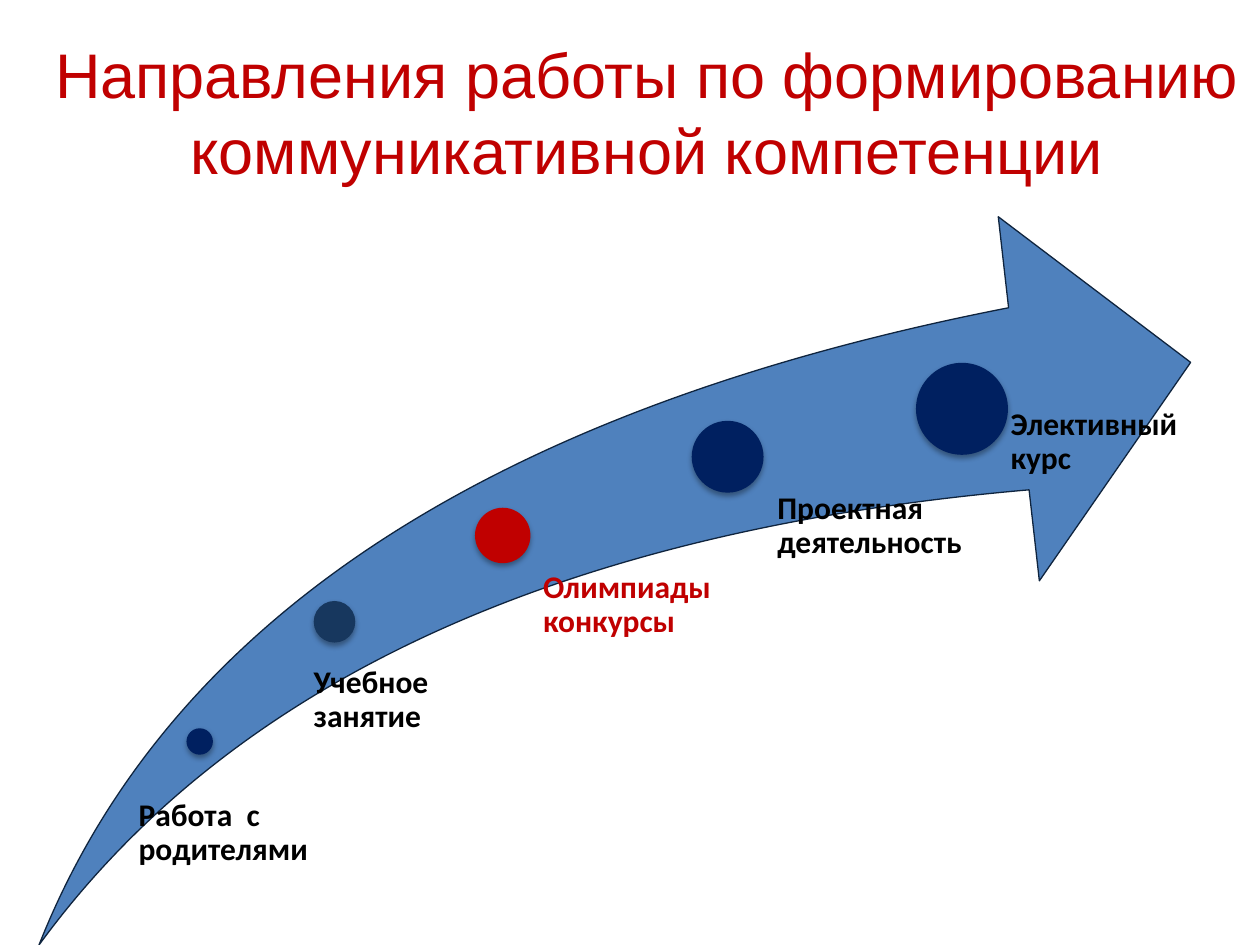
import dataclasses

import lxml.etree
import pptx
import pptx.dml.color
import pptx.enum.shapes
import pptx.enum.text
import pptx.oxml.ns
import pptx.util

RGB = pptx.dml.color.RGBColor
SHAPE = pptx.enum.shapes.MSO_SHAPE
TEXT = pptx.enum.text

RED = RGB(0xC0, 0x00, 0x00)
BLUE = RGB(0x4F, 0x81, 0xBD)
EDGE = RGB(0x0F, 0x24, 0x3E)
NAVY = RGB(0x00, 0x20, 0x60)
SLATE = RGB(0x17, 0x37, 0x5E)
BLACK = RGB(0x00, 0x00, 0x00)

# The slide is a grid of 100 columns by 75 rows of square cells.
COLS, ROWS = 100, 75
CELL = pptx.util.Inches(0.1)


@dataclasses.dataclass(frozen=True)
class Box:
    col: float
    row: float
    wide: float
    high: float

    def place(self) -> tuple[int, ...]:
        return tuple(round(n * CELL) for n in dataclasses.astuple(self))


@dataclasses.dataclass(frozen=True)
class Step:
    """A dot on the arrow with its label; the inset is in cells."""
    text: str
    dot: Box
    label: Box
    inset: float
    fill: RGB = NAVY
    ink: RGB = BLACK


ARROW = Box(3.1, 17.2, 91.4, 57.8)
TITLE = Box(2.7, 2.3, 97.3, 13.1)
STEPS = [
    Step("Работа  с родителями", Box(14.8, 57.8, 2.1, 2.1),
         Box(9.9, 63.4, 17.3, 9.4), 1.1),
    Step("Учебное\nзанятие", Box(24.9, 47.7, 3.3, 3.3),
         Box(23.1, 52.9, 18.3, 20), 1.8, SLATE),
    Step("Олимпиады\nконкурсы", Box(37.7, 40.3, 4.4, 4.4),
         Box(40.7, 45.3, 17.9, 8.1), 2.4, RED, RED),
    Step("Проектная\nдеятельность", Box(54.9, 33.4, 5.7, 5.7),
         Box(58.7, 39.1, 18.5, 6.6), 3),
    Step("Элективный курс", Box(72.7, 28.8, 7.3, 7.3),
         Box(76.3, 32.4, 18.5, 42.6), 3.9),
]


def style(frame, face: str, size: int, ink: RGB, bold: bool) -> None:
    for para in frame.paragraphs:
        for run in para.runs:
            font = run.font
            font.name, font.size, font.bold = face, pptx.util.Pt(size), bold
            font.color.rgb = ink


def add_title(slide) -> None:
    title = slide.shapes.title
    title.left, title.top, title.width, title.height = TITLE.place()
    frame = title.text_frame
    frame.text = "Направления работы по формированию коммуникативной компетенции"
    frame.word_wrap = True
    frame.auto_size = TEXT.MSO_AUTO_SIZE.NONE
    frame.vertical_anchor = TEXT.MSO_ANCHOR.MIDDLE
    frame.paragraphs[0].alignment = TEXT.PP_ALIGN.CENTER
    style(frame, "Arial", 36, RED, False)


def add_arrow(slide) -> None:
    arrow = slide.shapes.add_shape(SHAPE.SWOOSH_ARROW, *ARROW.place())
    arrow.adjustments[0] = arrow.adjustments[1] = 0.25
    arrow.shadow.inherit = False
    arrow.fill.solid()
    arrow.fill.fore_color.rgb = BLUE
    arrow.line.color.rgb = EDGE
    arrow.line.width = pptx.util.Pt(0.75)


def add_shade(shape) -> None:
    """Give the shape a soft shadow straight below it."""
    shape.shadow.inherit = False
    qn = pptx.oxml.ns.qn
    effects = shape.element.spPr.find(qn("a:effectLst"))
    shade = lxml.etree.SubElement(
        effects, qn("a:outerShdw"), blurRad=str(pptx.util.Pt(3.1)),
        dist=str(pptx.util.Pt(1.8)), dir="5400000", rotWithShape="0")
    color = lxml.etree.SubElement(shade, qn("a:srgbClr"), val=str(BLACK))
    lxml.etree.SubElement(color, qn("a:alpha"), val="35000")


def add_step(slide, step: Step) -> None:
    dot = slide.shapes.add_shape(SHAPE.OVAL, *step.dot.place())
    dot.fill.solid()
    dot.fill.fore_color.rgb = step.fill
    dot.line.fill.background()
    add_shade(dot)

    frame = slide.shapes.add_textbox(*step.label.place()).text_frame
    frame.word_wrap = True
    frame.margin_left = round(step.inset * CELL)
    frame.margin_top = frame.margin_right = frame.margin_bottom = 0
    frame.text = step.text
    for para in frame.paragraphs:
        para.line_spacing = 0.9
    style(frame, "Calibri", 18, step.ink, True)


def main() -> None:
    deck = pptx.Presentation()
    deck.slide_width, deck.slide_height = COLS * CELL, ROWS * CELL
    slide = deck.slides.add_slide(deck.slide_layouts.get_by_name("Title Only"))
    add_title(slide)
    add_arrow(slide)
    for step in STEPS:
        add_step(slide, step)
    deck.save("out.pptx")


if __name__ == "__main__":
    main()
